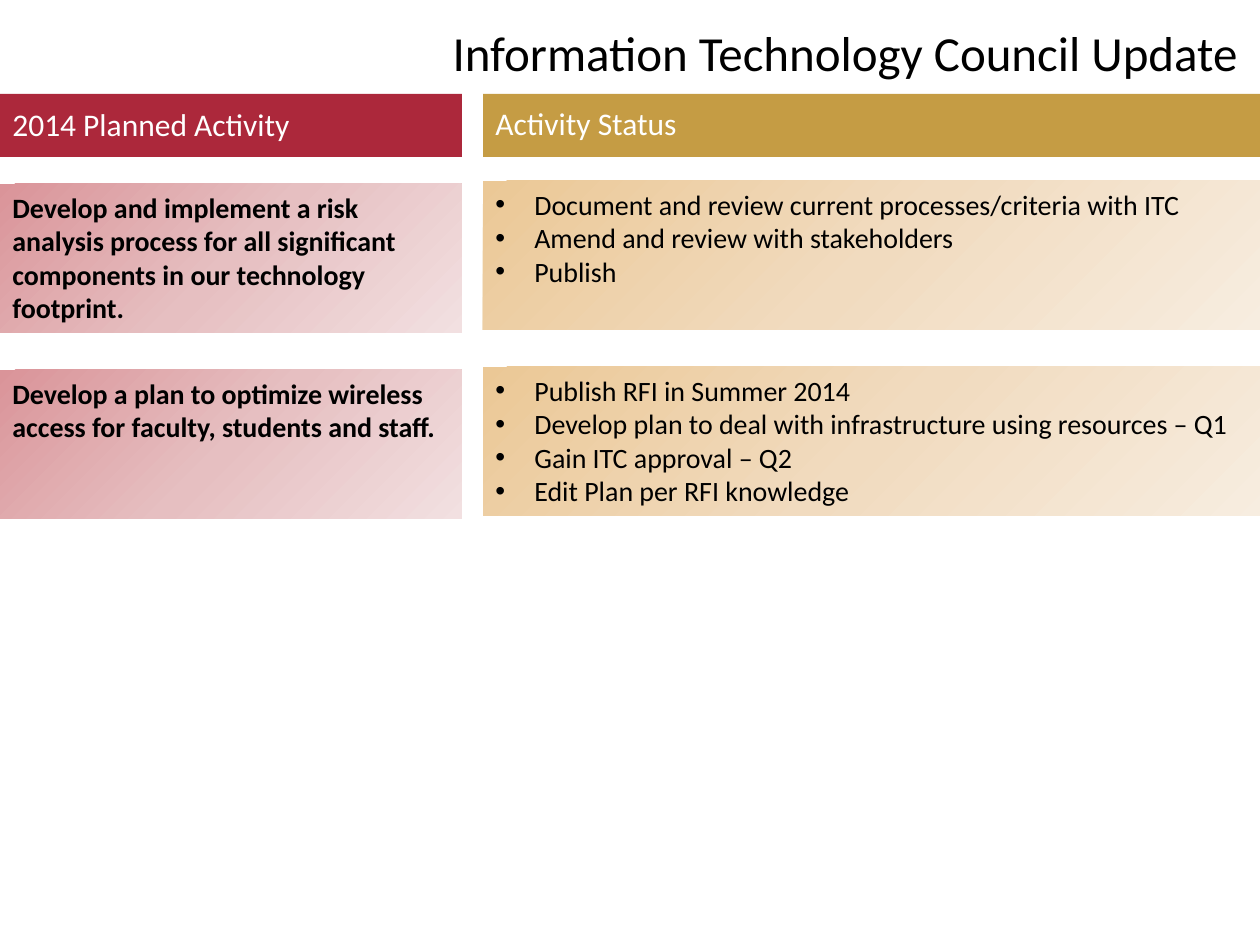
from copy import deepcopy
from dataclasses import dataclass

from pptx import Presentation, util as u
from pptx.dml.color import RGBColor
from pptx.enum import shapes, text
from pptx.oxml.ns import qn
from lxml import etree

PX = 914400 / 126


@dataclass(frozen=True)
class Theme:
    """Colours, font and type sizes of the slide."""
    font: str = "Calibri"
    ink: str = "000000"
    pale: str = "FFFFFF"
    red: str = "AC283B"
    gold: str = "C59C44"
    rose: tuple = ("DA9499", "E6BFC1", "F2E0E1")
    sand: tuple = ("EBC896", "F1DBBF", "F7EDE0")
    title: int = 28
    head: int = 18
    body: int = 16


T = Theme()


def emu(*box):
    """Turn px lengths into EMU."""
    return [round(n * PX) for n in box]


def write(frame, lines, size, color, bold=False, align=text.PP_ALIGN.LEFT):
    """Fill a text frame with one paragraph per line."""
    frame.vertical_anchor = text.MSO_ANCHOR.TOP
    frame.text = "\n".join(lines)
    for para in frame.paragraphs:
        para.alignment = align
        font = para.font
        font.name, font.size, font.bold = T.font, u.Pt(size), bold
        font.color.rgb = RGBColor.from_string(color)


def label(slide, box, line, size, color, align=text.PP_ALIGN.LEFT):
    """Add a single line of text that does not wrap."""
    frame = slide.shapes.add_textbox(*emu(*box)).text_frame
    frame.word_wrap = False
    write(frame, [line], size, color, align=align)


def block(slide, box):
    """Add a plain rectangle without line or shadow."""
    shape = slide.shapes.add_shape(shapes.MSO_SHAPE.RECTANGLE, *emu(*box))
    shape.shadow.inherit = False
    shape.line.fill.background()
    return shape


def blend(fill, colors):
    """Set a diagonal gradient of three even stops."""
    fill.gradient()
    fill.gradient_angle = 315
    stops = fill._fill._gradFill.find(qn("a:gsLst"))
    stops.insert(1, deepcopy(stops[0]))
    for i, (stop, color) in enumerate(zip(fill.gradient_stops, colors)):
        stop.position = i / 2
        stop.color.rgb = RGBColor.from_string(color)


def bullet(para):
    """Give a paragraph a hanging bullet."""
    props = para._p.get_or_add_pPr()
    indent = emu(39)[0]
    props.set("marL", str(indent))
    props.set("indent", str(-indent))
    font = etree.Element(qn("a:buFont"), typeface="Arial")
    mark = etree.Element(qn("a:buChar"), char="•")
    for i, node in enumerate((font, mark)):
        props.insert(i, node)


def header(slide, box, line, color, width, drop):
    """Add a column header bar with its caption."""
    left, top = box[:2]
    fill = block(slide, box).fill
    fill.solid()
    fill.fore_color.rgb = RGBColor.from_string(color)
    label(slide, (left, top + drop, width, 50), line, T.head, T.pale)


def panel(slide, box, lines, colors, listed):
    """Add a gradient panel with a bold goal or a bullet list."""
    shape = block(slide, box)
    blend(shape.fill, colors)
    frame = shape.text_frame
    frame.word_wrap = True
    write(frame, lines, T.body, T.ink, bold=not listed)
    if listed:
        for para in frame.paragraphs:
            bullet(para)


def main():
    """Build and save the slide."""
    deck = Presentation()
    deck.slide_width, deck.slide_height = emu(1260, 945)
    slide = deck.slides.add_slide(deck.slide_layouts[6])
    right, wide, tall = 483, 462, 149
    header(slide, (right, 94, 777, 63), "Activity Status", T.gold, 209, 4)
    header(slide, (0, 94, wide, 63), "2014 Planned Activity", T.red, 306, 5)
    label(slide, (354, 16, 896, 72), "Information Technology Council Update",
          T.title, T.ink, text.PP_ALIGN.RIGHT)
    rows = [
        (184, 181, 781,
         "Develop and implement a risk analysis process for all significant "
         "components in our technology footprint.",
         ["Document and review current processes/criteria with ITC",
          "Amend and review with stakeholders", "Publish"]),
        (370, 367, 785,
         "Develop a plan to optimize wireless access for faculty, "
         "students and staff.",
         ["Publish RFI in Summer 2014",
          "Develop plan to deal with infrastructure using resources – Q1",
          "Gain ITC approval – Q2", "Edit Plan per RFI knowledge"]),
    ]
    for goal_top, step_top, width, goal, steps in rows:
        panel(slide, (0, goal_top, wide, tall), [goal], T.rose, False)
        panel(slide, (right, step_top, width, tall), steps, T.sand, True)
    deck.save("out.pptx")


if __name__ == "__main__":
    main()
